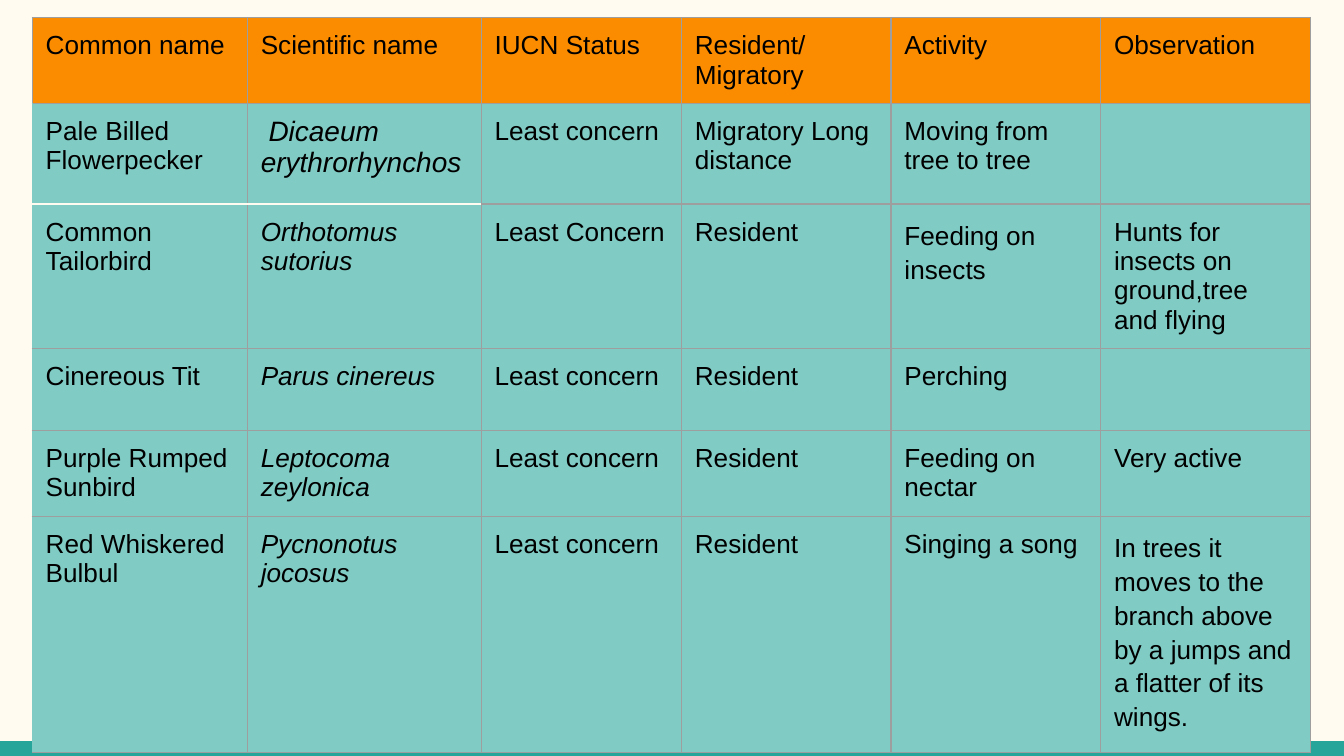
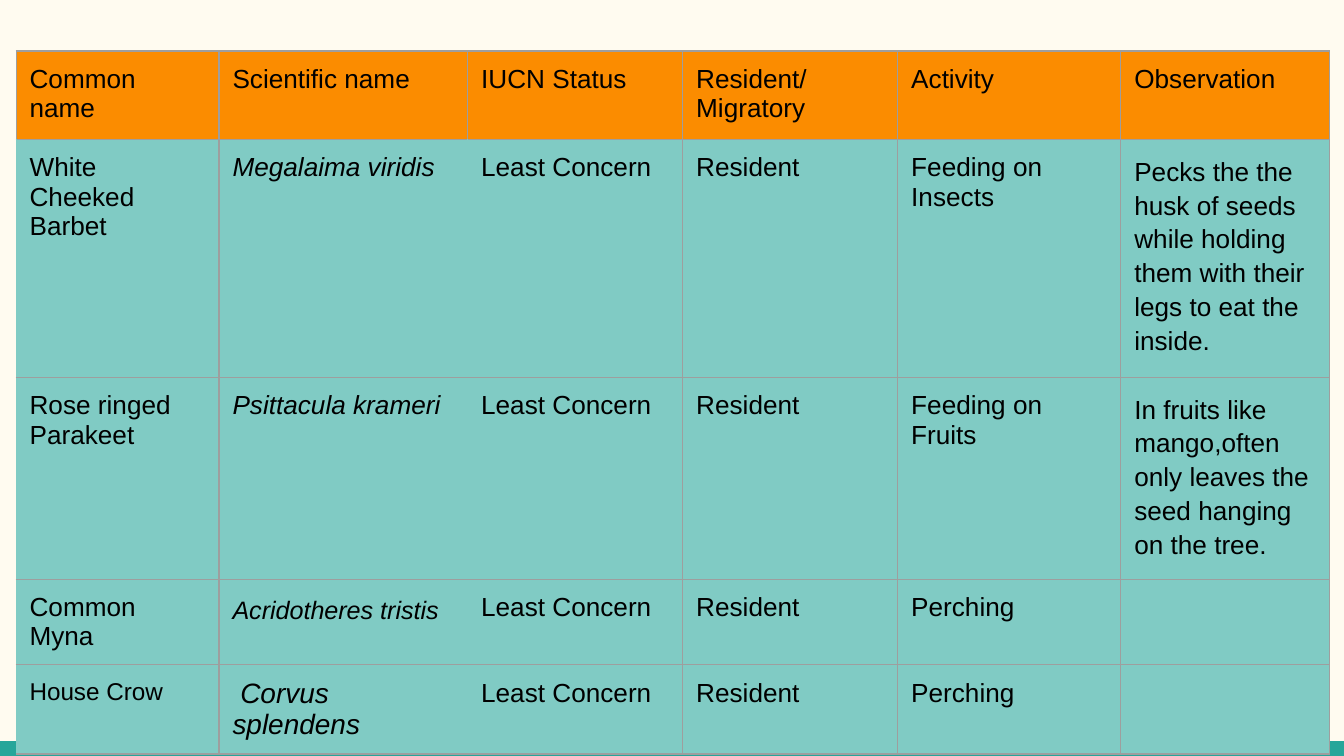
from lxml import etree
from pptx import Presentation
from pptx import util as u
from pptx.dml.color import RGBColor
from pptx.enum import shapes
from pptx.oxml import ns

COLORS = {
    "paper": "FFFBF0", "band": "26A69A", "header": "FB8C00",
    "body": "80CBC4", "rule": "9E9E9E", "ink": "000000",
}
WIDTH = u.Inches(10)
HEIGHT = WIDTH * 9 // 16
BAND_HEIGHT = u.Inches(0.11)
FONT = {"name": "Arial", "size": u.Pt(14), "bold": False, "italic": False}
LOOSE = {"line_spacing": 1.15, "space_after": u.Pt(12)}
INSETS = ("margin_left", "margin_top", "margin_right", "margin_bottom")
SIDES = {"left": "a:lnL", "right": "a:lnR", "top": "a:lnT", "bottom": "a:lnB"}
SCIENTIFIC = 1  # column set in italics

# Content
HEADINGS = ("Common name", "Scientific name", "IUCN Status",
            "Resident/\nMigratory", "Activity", "Observation")

SIGHTINGS = [
    {
        "at": (0.24, 0.13),
        "columns": (1.6, 1.74, 1.49, 1.56, 1.56, 1.56),
        "rows": (0.61, 0.75, 0.4, 0.61, 0.64, 1.76),
        "birds": [
            ("Pale Billed Flowerpecker", " Dicaeum erythrorhynchos", "Least concern",
             "Migratory Long distance", "Moving from tree to tree", ""),
            ("Common Tailorbird", "Orthotomus sutorius", "Least Concern",
             "Resident", "Feeding on insects",
             "Hunts for insects on ground,tree and flying"),
            ("Cinereous Tit", "Parus cinereus", "Least concern",
             "Resident", "Perching", ""),
            ("Purple Rumped Sunbird", "Leptocoma zeylonica", "Least concern",
             "Resident", "Feeding on nectar", "Very active"),
            ("Red Whiskered Bulbul", "Pycnonotus jocosus", "Least concern",
             "Resident", "Singing a song",
             "In trees it moves to the branch above by a jumps "
             "and a flatter of its wings."),
        ],
        # (row, column): colours of the sides that differ from the grey rule
        "borders": {
            (1, 0): {"bottom": "paper"}, (1, 1): {"bottom": "paper"},
            (2, 0): {"top": "paper"}, (2, 1): {"top": "paper"},
        },
        "fonts": {(1, 1): {"size": u.Pt(15)}},
        "spacing": {(2, 4): LOOSE, (5, 5): LOOSE},
    },
    {
        "at": (0.12, 0.38),
        "columns": (1.51, 1.85, 1.6, 1.6, 1.66, 1.55),
        "rows": (0.66, 1.77, 1.5, 0.46, 0.45),
        "birds": [
            ("White Cheeked Barbet", "Megalaima viridis", "Least Concern",
             "Resident", "Feeding on Insects",
             "Pecks the the husk of seeds while holding them with their legs "
             "to eat the inside."),
            ("Rose ringed Parakeet", "Psittacula krameri", "Least Concern",
             "Resident", "Feeding on Fruits",
             "In fruits like mango,often only leaves the seed hanging on the tree."),
            ("Common Myna", "Acridotheres tristis", "Least Concern",
             "Resident", "Perching", ""),
            ("House Crow", " Corvus splendens", "Least Concern",
             "Resident", "Perching", ""),
        ],
        "borders": {
            (row, column): {side: "body"}
            for row in range(1, 5) for column, side in ((1, "right"), (2, "left"))
        },
        "fonts": {(3, 1): {"size": u.Pt(13.5)}, (4, 0): {"size": u.Pt(13)},
                  (4, 1): {"size": u.Pt(15)}},
        "spacing": {(1, 5): LOOSE, (2, 5): LOOSE, (3, 1): {"line_spacing": 1.15}},
    },
]


def rgb(name):
    return RGBColor.from_string(COLORS[name])


def apply(target, values):
    for name, value in values.items():
        setattr(target, name, value)


def paint(fill, name):
    fill.solid()
    fill.fore_color.rgb = rgb(name)


def draw_borders(cell, sides):
    properties = cell._tc.get_or_add_tcPr()
    for side, tag in SIDES.items():
        line = etree.SubElement(properties, ns.qn(tag), w=str(u.Pt(0.75)))
        fill = etree.SubElement(line, ns.qn("a:solidFill"))
        etree.SubElement(fill, ns.qn("a:srgbClr"), val=COLORS[sides.get(side, "rule")])


def write_cell(cell, content, font, spacing):
    if not content:
        return
    cell.text_frame.text = content
    for para in cell.text_frame.paragraphs:
        apply(para, spacing)
        for span in para.runs:
            apply(span.font, font)
            span.font.color.rgb = rgb("ink")


def add_page(deck):
    page = deck.slides.add_slide(deck.slide_layouts[6])
    paint(page.background.fill, "paper")
    # Footer band
    band = page.shapes.add_shape(shapes.MSO_SHAPE.RECTANGLE, 0, HEIGHT - BAND_HEIGHT,
                                 WIDTH, BAND_HEIGHT)
    band.shadow.inherit = False
    paint(band.fill, "band")
    band.line.fill.background()
    return page


def add_sightings(page, data):
    lines = [HEADINGS] + data["birds"]
    left, top = data["at"]
    frame = page.shapes.add_table(
        len(lines), len(HEADINGS), u.Inches(left), u.Inches(top),
        u.Inches(sum(data["columns"])), u.Inches(sum(data["rows"])))
    table = frame.table
    apply(table, {"first_row": False, "horz_banding": False})
    for column, width in zip(table.columns, data["columns"]):
        column.width = u.Inches(width)
    for row, height in zip(table.rows, data["rows"]):
        row.height = u.Inches(height)

    for row, line in enumerate(lines):
        for column, content in enumerate(line):
            place = (row, column)
            cell = table.cell(row, column)
            apply(cell, dict.fromkeys(INSETS, u.Inches(0.1)))
            edge = {"left": "body"} if row and not column else {}
            draw_borders(cell, edge | data["borders"].get(place, {}))
            paint(cell.fill, "body" if row else "header")
            italic = {"italic": row > 0 and column == SCIENTIFIC}
            write_cell(cell, content, FONT | italic | data["fonts"].get(place, {}),
                       data["spacing"].get(place, {}))


def main():
    deck = Presentation()
    apply(deck, {"slide_width": WIDTH, "slide_height": HEIGHT})
    for data in SIGHTINGS:
        add_sightings(add_page(deck), data)
    deck.save("out.pptx")


if __name__ == "__main__":
    main()
